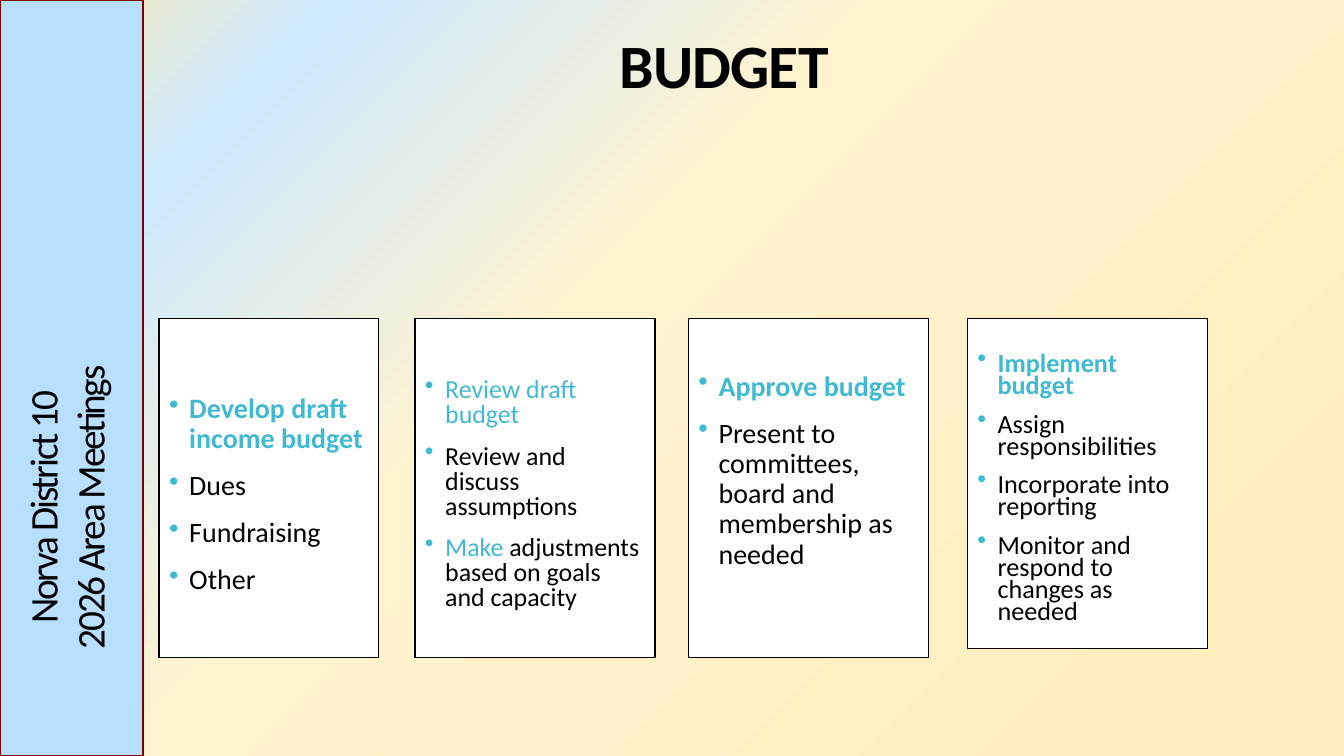
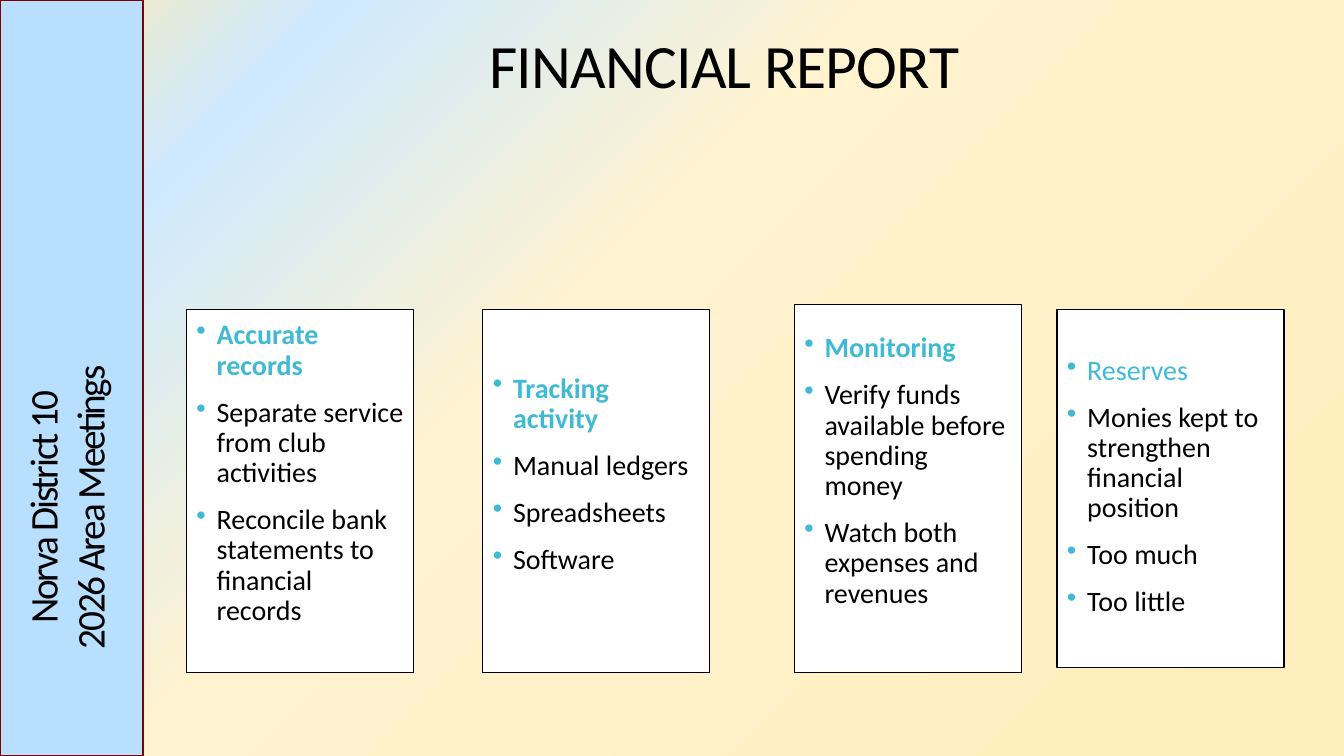
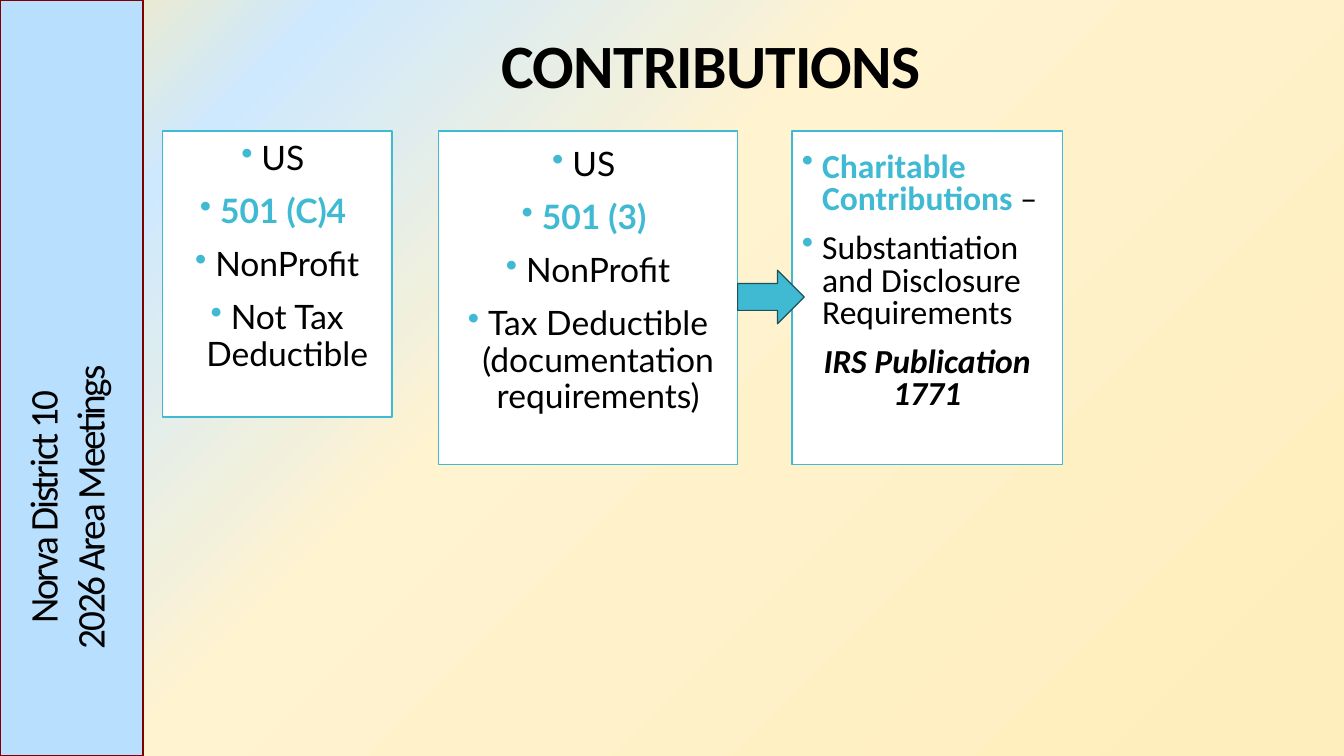
import lxml.etree
import pptx
import pptx.dml.color
import pptx.enum.shapes
import pptx.enum.text
import pptx.oxml.ns
import pptx.util

Cm, Pt = pptx.util.Cm, pptx.util.Pt
qn = pptx.oxml.ns.qn
SHAPE = pptx.enum.shapes.MSO_SHAPE
ALIGN = pptx.enum.text.PP_ALIGN
ANCHOR = pptx.enum.text.MSO_ANCHOR

BLACK, WHITE, ACCENT = "000000", "FFFFFF", "40BAD2"
BAND, MAROON, ARROW_EDGE = "B8E0FE", "800000", "1C525C"
BACKGROUND_STOPS = [(6, "FFEEBD"), (58, "FFF3D0"), (84, "CEE9FE"), (100, "FFEBB1")]

# Run styles used inside the cards
STYLES = {
    "body": {"color": BLACK, "bold": False},
    "accent": {"color": ACCENT, "bold": False},
    "head": {"color": ACCENT, "bold": True},
    "cite": {"color": BLACK, "bold": True, "italic": True},
}


def rgb(value):
    return pptx.dml.color.RGBColor.from_string(value)


def apply(target, values):
    for name, value in values.items():
        setattr(target, name, value)


def add_xml(parent, tag, **attributes):
    return lxml.etree.SubElement(parent, qn(tag), attributes)


class Deck:
    """Shared style and the slide being built."""

    def __init__(self):
        self.presentation = pptx.Presentation()
        apply(self.presentation, {"slide_width": Cm(33.87), "slide_height": Cm(19.05)})
        self.slide = None
        self.set_background()

    def set_background(self):
        master = self.presentation.slide_master
        master.background.fill.gradient()
        gradient = master.element.find(".//" + qn("a:gradFill"))
        for child in list(gradient):
            gradient.remove(child)
        stops = add_xml(gradient, "a:gsLst")
        for position, color in BACKGROUND_STOPS:
            stop = add_xml(stops, "a:gs", pos=str(position * 1000))
            add_xml(stop, "a:srgbClr", val=color)
        path = add_xml(gradient, "a:path", path="circle")
        add_xml(path, "a:fillToRect", l="100000", t="100000")

    def new_slide(self, title, title_left=4.42, bold=True):
        self.slide = self.presentation.slides.add_slide(self.presentation.slide_layouts[6])
        self.side_band()
        frame = self.text_box(title_left, 0.76, 27.66, 1.93, ANCHOR.BOTTOM)
        paragraph = frame.paragraphs[0]
        apply(paragraph, {"alignment": ALIGN.CENTER, "line_spacing": 0.9})
        self.run(paragraph, title, 44, bold=bold, tracking=-0.6)

    def side_band(self):
        self.shape(SHAPE.RECTANGLE, 0, 0, 3.61, 19.05, BAND, MAROON, 1.5)
        frame = self.text_box(0.2, 7.92, 2.9, 9.73, ANCHOR.MIDDLE, "vert270")
        for index, line in enumerate(["Norva District 10", "2026 Area Meetings"]):
            paragraph = frame.add_paragraph() if index else frame.paragraphs[0]
            paragraph.alignment = ALIGN.CENTER
            self.run(paragraph, line, 28, tracking=-1.5)

    def shape(self, kind, left, top, width, height, fill, line, line_width=0.85):
        shape = self.slide.shapes.add_shape(kind, Cm(left), Cm(top), Cm(width), Cm(height))
        shape.shadow.inherit = False
        shape.fill.solid()
        shape.fill.fore_color.rgb = rgb(fill)
        shape.line.color.rgb = rgb(line)
        shape.line.width = Pt(line_width)
        return shape

    def text_box(self, left, top, width, height, anchor, direction="horz"):
        box = self.slide.shapes.add_textbox(Cm(left), Cm(top), Cm(width), Cm(height))
        apply(box.text_frame, {"word_wrap": True, "vertical_anchor": anchor})
        box.element.find(".//" + qn("a:bodyPr")).set("vert", direction)
        return box.text_frame

    def run(self, paragraph, text, size, color=BLACK, bold=False, italic=False,
            font="Calibri", tracking=0):
        run = paragraph.add_run()
        run.text = text
        apply(run.font, {"name": font, "size": Pt(size), "bold": bold, "italic": italic})
        run.font.color.rgb = rgb(color)
        if tracking:
            run.font.element.set("spc", str(round(tracking * 100))) if hasattr(
                run.font, "element") else run._r.get_or_add_rPr().set(
                "spc", str(round(tracking * 100)))

    def bullet(self, paragraph):
        properties = paragraph._p.get_or_add_pPr()
        properties.set("marL", str(Cm(0.51)))
        properties.set("indent", str(-Cm(0.51)))
        add_xml(add_xml(properties, "a:buClr"), "a:srgbClr", val=ACCENT)
        add_xml(properties, "a:buChar", char="•")

    def card(self, left, top, width, height, padding, items, size=20, spacing=0.9,
             line=BLACK, font="Calibri", alignment=ALIGN.LEFT):
        """Each item is a body string or a list of (text, style) runs."""
        shape = self.shape(SHAPE.RECTANGLE, left, top, width, height, WHITE, line)
        frame = shape.text_frame
        apply(frame, {"word_wrap": True, "vertical_anchor": ANCHOR.TOP,
                      "margin_top": Cm(padding)})
        for index, item in enumerate(items):
            runs = [(item, "body")] if isinstance(item, str) else item
            cited = runs[0][1] == "cite"
            paragraph = frame.add_paragraph() if index else frame.paragraphs[0]
            if not cited:
                self.bullet(paragraph)
            apply(paragraph, {"alignment": ALIGN.CENTER if cited else alignment,
                              "line_spacing": spacing,
                              "space_before": Pt(12 if index else 0)})
            for text, style in runs:
                self.run(paragraph, text, size, font=font, **STYLES[style])

    def arrow(self, left, top, width, height):
        self.shape(SHAPE.RIGHT_ARROW, left, top, width, height, ACCENT, ARROW_EDGE)


def main():
    deck = Deck()

    # Budget
    deck.new_slide("BUDGET")
    deck.card(4.01, 8.03, 5.54, 8.53, 1.91, [
        [("Develop draft income budget", "head")], "Dues", "Fundraising", "Other"])
    deck.card(10.46, 8.03, 6.05, 8.53, 1.52, [
        [("Review draft budget", "accent")],
        "Review and discuss assumptions",
        [("Make ", "accent"), ("adjustments based on goals and capacity", "body")],
    ], size=18.5, spacing=0.8)
    deck.card(17.35, 8.03, 6.05, 8.53, 1.34, [
        [("Approve budget", "head")],
        "Present to committees, board and membership as needed"])
    deck.card(24.38, 8.03, 6.05, 8.31, 0.91, [
        [("Implement budget", "head")],
        "Assign responsibilities",
        "Incorporate into reporting",
        "Monitor and respond to changes as needed",
    ], size=18.7, spacing=0.7)

    # Financial report
    deck.new_slide("FINANCIAL REPORT", bold=False)
    deck.card(4.7, 7.8, 5.72, 9.14, 0.28, [
        [("Accurate records", "head")],
        "Separate service from club activities",
        "Reconcile bank statements to financial records"])
    deck.card(12.17, 7.8, 5.72, 9.14, 1.62, [
        [("Tracking activity", "head")], "Manual ledgers", "Spreadsheets", "Software"])
    deck.card(20.02, 7.67, 5.72, 9.27, 0.74, [
        [("Monitoring", "head")],
        "Verify funds available before spending money",
        "Watch both expenses and revenues"])
    deck.card(26.64, 7.8, 5.72, 9.02, 1.17, [
        [("Reserves", "accent")],
        "Monies kept to strengthen financial position",
        "Too much",
        "Too little"])

    # Contributions
    deck.new_slide("CONTRIBUTIONS", title_left=4.09)
    status_cards = [
        (4.09, 5.79, 7.21, 0.27, "501 (C)4 ", "Not Tax Deductible"),
        (11.05, 7.54, 8.41, 0.42, "501 (3) ",
         "Tax Deductible (documentation requirements)"),
    ]
    for left, width, height, padding, code, deduction in status_cards:
        deck.card(left, 3.3, width, height, padding,
                  ["US ", [(code, "head")], "NonProfit", deduction],
                  size=24, line=ACCENT, font="Lato", alignment=ALIGN.CENTER)
    deck.card(19.96, 3.3, 6.81, 8.41, 0.55, [
        [("Charitable Contributions ", "head"), ("–", "body")],
        "Substantiation and Disclosure Requirements",
        [("IRS Publication 1771", "cite")],
    ], size=24, spacing=0.8, line=ACCENT)
    deck.arrow(18.59, 6.81, 1.68, 1.35)

    deck.presentation.save("out.pptx")


if __name__ == "__main__":
    main()
